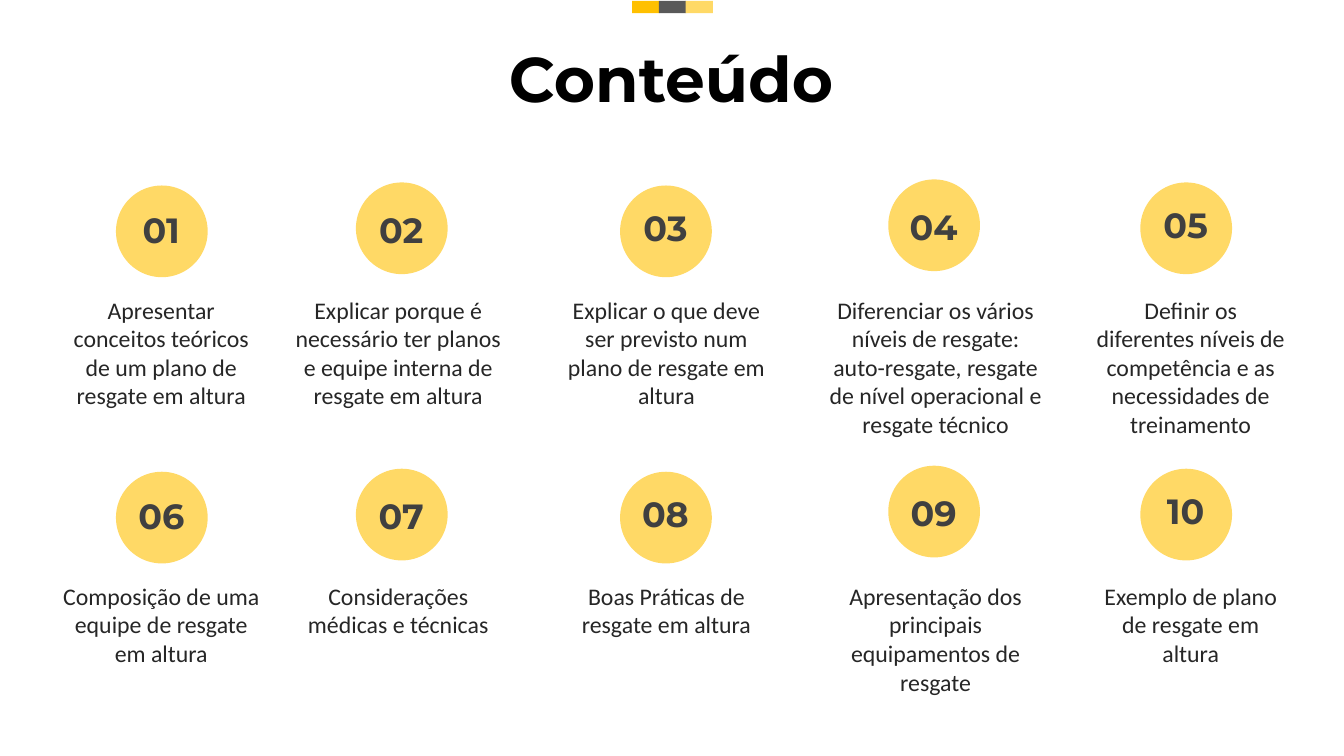
from pptx import Presentation
from pptx.dml.color import RGBColor
from pptx.enum.shapes import MSO_SHAPE
from pptx.enum.text import MSO_AUTO_SIZE, PP_ALIGN
from pptx.util import Inches, Pt

prs = Presentation()
prs.slide_width = Inches(13.33)
prs.slide_height = Inches(7.5)
slide = prs.slides.add_slide(prs.slide_layouts[6])


def add_filled(kind, left, top, width, height, color):
    shape = slide.shapes.add_shape(
        kind, Inches(left), Inches(top), Inches(width), Inches(height))
    shape.shadow.inherit = False
    shape.fill.solid()
    shape.fill.fore_color.rgb = RGBColor.from_string(color)
    shape.line.fill.background()


def add_label(text, left, top, width, height, font, size, color, bold=False):
    box = slide.shapes.add_textbox(
        Inches(left), Inches(top), Inches(width), Inches(height))
    frame = box.text_frame
    frame.word_wrap = True
    frame.auto_size = MSO_AUTO_SIZE.SHAPE_TO_FIT_TEXT
    frame.text = text
    paragraph = frame.paragraphs[0]
    paragraph.alignment = PP_ALIGN.CENTER
    run = paragraph.runs[0]
    run.font.name = font
    run.font.size = Pt(size)
    run.font.bold = bold
    run.font.color.rgb = RGBColor.from_string(color)
    return frame


title = add_label("Conteúdo", 2.01, 0.39, 9.29, 0.76, "Montserrat", 45, "000000", True)
title.margin_left = title.margin_right = title.margin_top = title.margin_bottom = 0

for index, color in enumerate(["FFC000", "595959", "FFD966"]):
    add_filled(MSO_SHAPE.RECTANGLE, 6.27 + index * 0.265, 0.01, 0.27, 0.12, color)

columns = [
    (1.15, 1.84, 2.02, 0.52, 2.16),
    (3.53, 1.81, 2.02, 2.81, 2.28),
    (6.15, 1.84, 2.00, 5.53, 2.16),
    (8.81, 1.78, 1.99, 8.08, 2.4),
    (11.31, 1.81, 1.97, 10.76, 2.1),
]
topics = [
    [
        ("Apresentar conceitos teóricos de um plano de resgate em altura", 1.25),
        ("Explicar porque é necessário ter planos e equipe interna de resgate em altura", 1.25),
        ("Explicar o que deve ser previsto num plano de resgate em altura", 1.25),
        ("Diferenciar os vários níveis de resgate: auto-resgate, resgate "
         "de nível operacional e resgate técnico", 1.53),
        ("Definir os diferentes níveis de competência e as necessidades de treinamento", 1.53),
    ],
    [
        ("Composição de uma equipe de resgate em altura", 0.96),
        ("Considerações médicas e técnicas", 0.67),
        ("Boas Práticas de resgate em altura", 0.67),
        ("Apresentação dos principais equipamentos de resgate", 1.25),
        ("Exemplo de plano de resgate em altura", 0.96),
    ],
]
row_pitch = 2.84

for row, row_topics in enumerate(topics):
    drop = row * row_pitch
    for col, (topic, height) in enumerate(row_topics):
        circle_left, circle_top, number_top, topic_left, topic_width = columns[col]
        number = f"{row * len(columns) + col + 1:02d}"
        add_filled(MSO_SHAPE.OVAL, circle_left, circle_top + drop, 0.91, 0.91, "FFD966")
        add_label(number, circle_left + 0.1, number_top + drop, 0.7, 0.52,
                  "Montserrat", 25, "404040", True)
        add_label(topic, topic_left, 2.88 + drop, topic_width, height,
                  "Calibri", 17, "262626")

prs.save("out.pptx")
